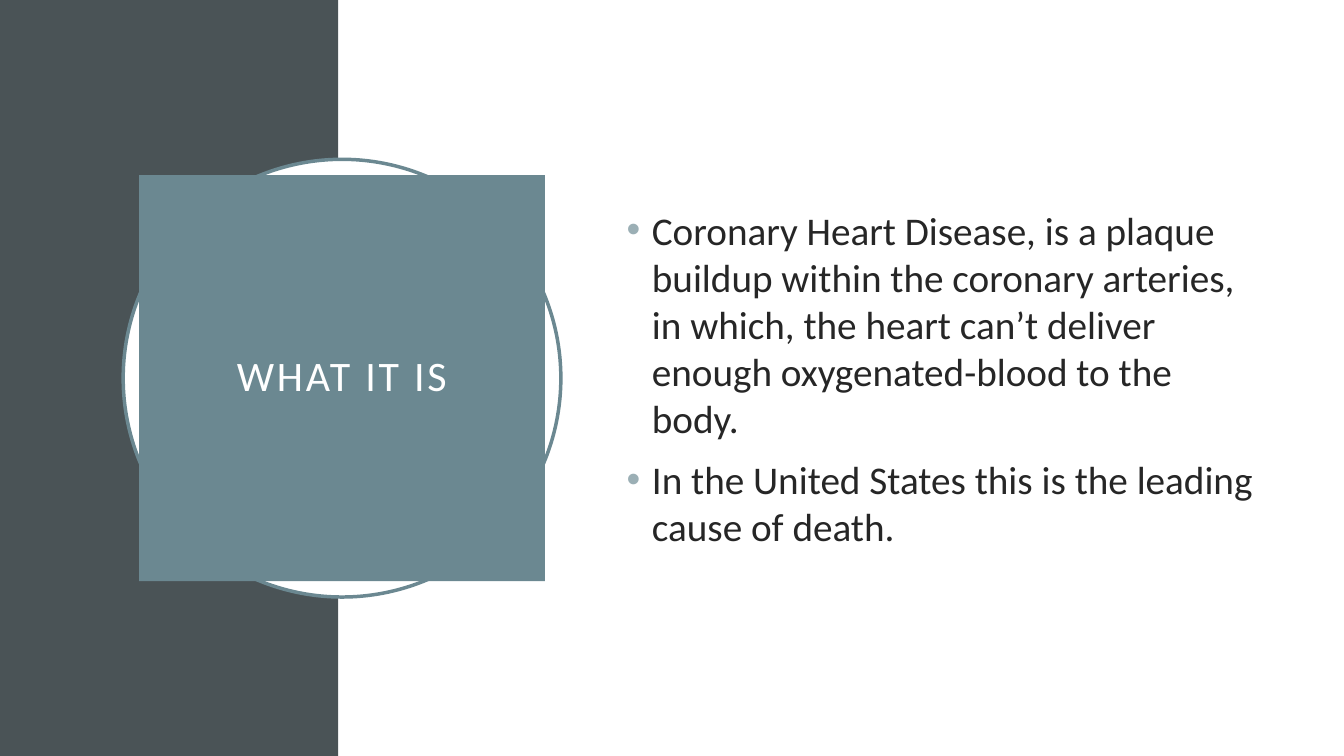
from pptx import Presentation
from pptx.dml.color import RGBColor
from pptx.enum.shapes import MSO_SHAPE as Shape
from pptx.enum.text import MSO_ANCHOR as Anchor, PP_ALIGN as Align
from pptx.oxml import parse_xml
from pptx.oxml.ns import nsdecls
from pptx.util import Cm, Pt

TITLE = "WHAT IT IS"
POINTS = [
    "Coronary Heart Disease, is a plaque buildup within the coronary arteries, "
    "in which, the heart can’t deliver enough oxygenated-blood to the body.",
    "In the United States this is the leading cause of death.",
]

SLATE = RGBColor(0x4A, 0x53, 0x56)
TEAL = RGBColor(0x6B, 0x88, 0x91)
WHITE = RGBColor(0xFF, 0xFF, 0xFF)
INK = RGBColor(0x26, 0x26, 0x26)
BULLET_COLOUR = RGBColor(0x9B, 0xAF, 0xB5)

SLIDE_W, SLIDE_H = Cm(33.87), Cm(19.05)
BAND_W = Cm(8.53)
CENTRE_X, CENTRE_Y = Cm(8.62), Cm(9.53)
RING, SQUARE = Cm(11.03), Cm(10.23)
INDENT = Cm(0.64)

TITLE_FONT = {"name": "Calibri", "size": Pt(30)}
POINT_FONT = {"name": "Calibri", "size": Pt(28)}
TITLE_FRAME = {"word_wrap": True, "vertical_anchor": Anchor.MIDDLE}
TITLE_FRAME |= {f"margin_{side}": Cm(0.51) for side in ("left", "top", "right", "bottom")}
POINTS_FRAME = {"word_wrap": True, "vertical_anchor": Anchor.MIDDLE}


def set_all(target, values):
    for key, value in values.items():
        setattr(target, key, value)


def add_filled(slide, kind, left, top, width, height, fill):
    shape = slide.shapes.add_shape(kind, left, top, width, height)
    shape.shadow.inherit = False
    shape.fill.solid()
    shape.fill.fore_color.rgb = fill
    shape.line.fill.background()
    return shape


def add_centred(slide, kind, side, fill):
    return add_filled(slide, kind, CENTRE_X - side // 2, CENTRE_Y - side // 2, side, side, fill)


def write(paragraph, text, font, colour):
    run = paragraph.add_run()
    run.text = text
    set_all(run.font, font)
    run.font.color.rgb = colour
    return run


def add_bullet(paragraph):
    properties = paragraph._p.get_or_add_pPr()
    properties.set("marL", str(INDENT))
    properties.set("indent", str(-INDENT))
    for xml in (
        f'<a:buClr {nsdecls("a")}><a:srgbClr val="{BULLET_COLOUR}"/></a:buClr>',
        f'<a:buFont {nsdecls("a")} typeface="Arial"/>',
        f'<a:buChar {nsdecls("a")} char="•"/>',
    ):
        properties.append(parse_xml(xml))


def main():
    deck = Presentation()
    deck.slide_width, deck.slide_height = SLIDE_W, SLIDE_H
    slide = deck.slides.add_slide(deck.slide_layouts[6])

    add_filled(slide, Shape.RECTANGLE, 0, 0, BAND_W, SLIDE_H, SLATE)
    add_filled(slide, Shape.RECTANGLE, BAND_W, 0, SLIDE_W - BAND_W, SLIDE_H, WHITE)

    ring = add_centred(slide, Shape.OVAL, RING, WHITE)
    ring.line.color.rgb = TEAL
    ring.line.width = Pt(2.5)

    square = add_centred(slide, Shape.RECTANGLE, SQUARE, TEAL)
    set_all(square.text_frame, TITLE_FRAME)
    heading = square.text_frame.paragraphs[0]
    set_all(heading, {"alignment": Align.CENTER, "line_spacing": 0.9})
    title = write(heading, TITLE, TITLE_FONT, WHITE)
    title._r.get_or_add_rPr().set("spc", "200")

    body = slide.shapes.add_textbox(Cm(15.54), Cm(3.89), Cm(16.46), Cm(11.25)).text_frame
    set_all(body, POINTS_FRAME)
    for i, point in enumerate(POINTS):
        paragraph = body.add_paragraph() if i else body.paragraphs[0]
        paragraph.space_before = Pt(10)
        add_bullet(paragraph)
        write(paragraph, point, POINT_FONT, INK)

    deck.save("out.pptx")


if __name__ == "__main__":
    main()
